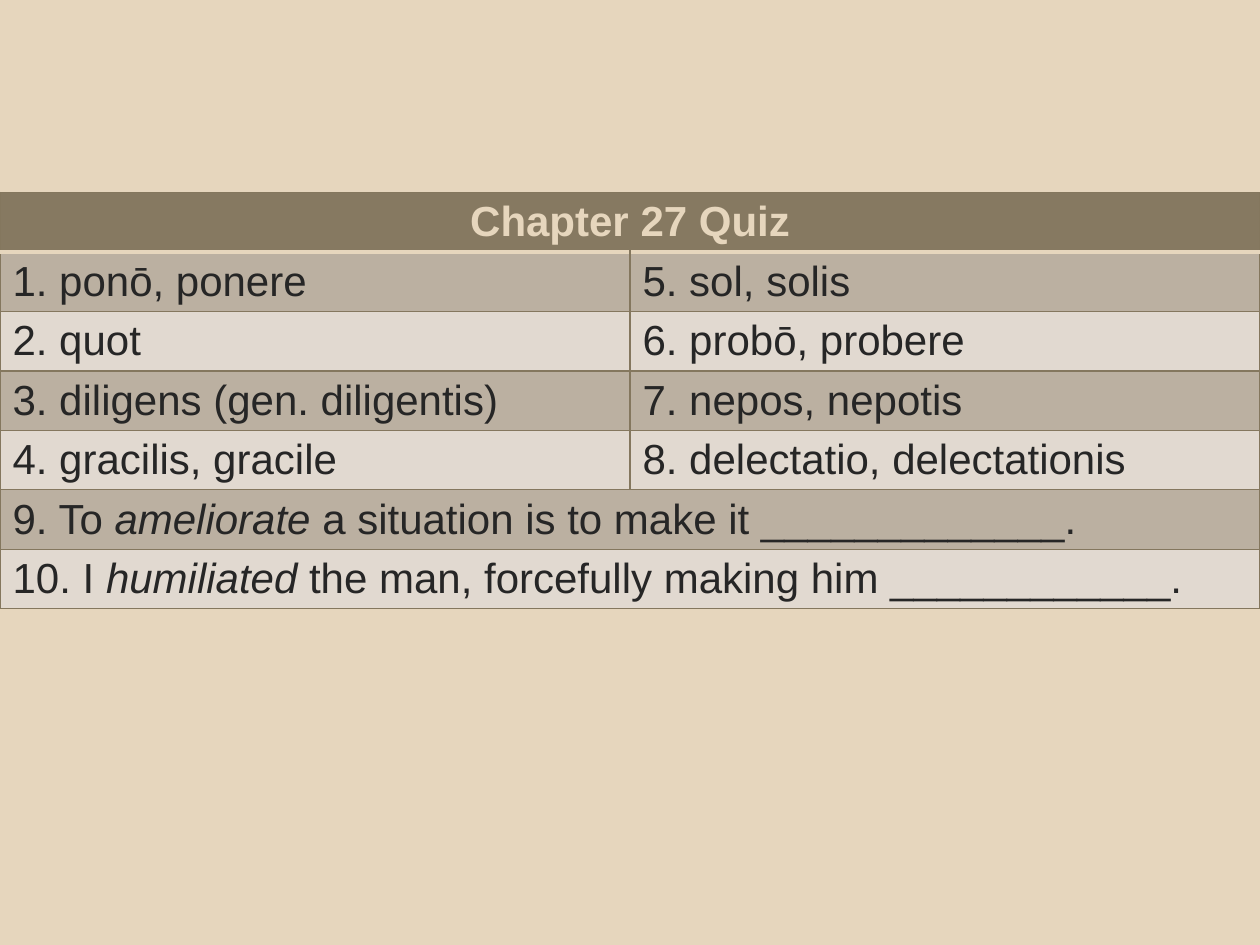
from dataclasses import dataclass

from lxml import etree
from pptx import Presentation
from pptx.dml.color import RGBColor
from pptx.enum import text
from pptx.oxml import ns
from pptx.util import Pt


@dataclass(frozen=True)
class Theme:
    sand: str = "E6D6BD"
    header: str = "867961"
    band_dark: str = "BBB0A1"
    band_light: str = "E1D9D0"
    border: str = "84775E"
    ink: str = "262626"
    font: str = "Arial"
    size: int = 24
    thin: float = 0.75
    thick: float = 2


THEME = Theme()
WIDTH, HEIGHT = 720, 540
TABLE_TOP, ROW_HEIGHT = 110, 34

TITLE = "Chapter 27 Quiz"
# Each row has one or two cells; a cell is a list of (words, italic) spans
QUESTIONS = [
    [[("1. ponō, ponere", False)], [("5. sol, solis", False)]],
    [[("2. quot", False)], [("6. probō, probere", False)]],
    [[("3. diligens (gen. diligentis)", False)], [("7. nepos, nepotis", False)]],
    [[("4. gracilis, gracile", False)], [("8. delectatio, delectationis", False)]],
    [[("9. To ", False), ("ameliorate", True),
      (" a situation is to make it _____________.", False)]],
    [[("10. I ", False), ("humiliated", True),
      (" the man, forcefully making him ____________.", False)]],
]


def set_borders(cell, top, bottom):
    """Draw the four cell edges; top and bottom are (colour, width) pairs."""
    properties = cell._tc.get_or_add_tcPr()
    side = (THEME.border, THEME.thin)
    edges = {"a:lnL": side, "a:lnR": side, "a:lnT": top, "a:lnB": bottom}
    for tag, (colour, width) in edges.items():
        line = etree.SubElement(properties, ns.qn(tag), w=str(Pt(width)))
        fill = etree.SubElement(line, ns.qn("a:solidFill"))
        etree.SubElement(fill, ns.qn("a:srgbClr"), val=colour)


def fill_cell(cell, colour):
    cell.fill.solid()
    cell.fill.fore_color.rgb = RGBColor.from_string(colour)


def write_cell(cell, spans, colour, bold=False, align=text.PP_ALIGN.LEFT):
    para = cell.text_frame.paragraphs[0]
    para.alignment = align
    for words, italic in spans:
        span = para.add_run()
        span.text = words
        font = span.font
        font.name, font.size = THEME.font, Pt(THEME.size)
        font.bold, font.italic = bold, italic
        font.color.rgb = RGBColor.from_string(colour)


def add_quiz_table(page):
    row_count = len(QUESTIONS) + 1
    table = page.shapes.add_table(
        row_count, 2, 0, Pt(TABLE_TOP), Pt(WIDTH), Pt(row_count * ROW_HEIGHT)
    ).table

    # Rows, borders and alternating fills
    thin = (THEME.border, THEME.thin)
    rule = (THEME.sand, THEME.thick)
    for index, row in enumerate(table.rows):
        row.height = Pt(ROW_HEIGHT)
        band = THEME.band_dark if index % 2 else THEME.band_light
        for cell in row.cells:
            set_borders(cell, rule if index == 1 else thin,
                        rule if index == 0 else thin)
            fill_cell(cell, band if index else THEME.header)

    # Heading across both columns
    heading = table.cell(0, 0)
    heading.merge(table.cell(0, 1))
    write_cell(heading, [(TITLE, False)], THEME.sand, True, text.PP_ALIGN.CENTER)

    # Questions; a single one takes the whole row
    for index, questions in enumerate(QUESTIONS, start=1):
        if len(questions) == 1:
            table.cell(index, 0).merge(table.cell(index, 1))
        for column, spans in enumerate(questions):
            write_cell(table.cell(index, column), spans, THEME.ink)


def main():
    deck = Presentation()
    deck.slide_width, deck.slide_height = Pt(WIDTH), Pt(HEIGHT)
    page = deck.slides.add_slide(deck.slide_layouts[6])
    background = page.background.fill
    background.solid()
    background.fore_color.rgb = RGBColor.from_string(THEME.sand)
    add_quiz_table(page)
    deck.save("out.pptx")


if __name__ == "__main__":
    main()
